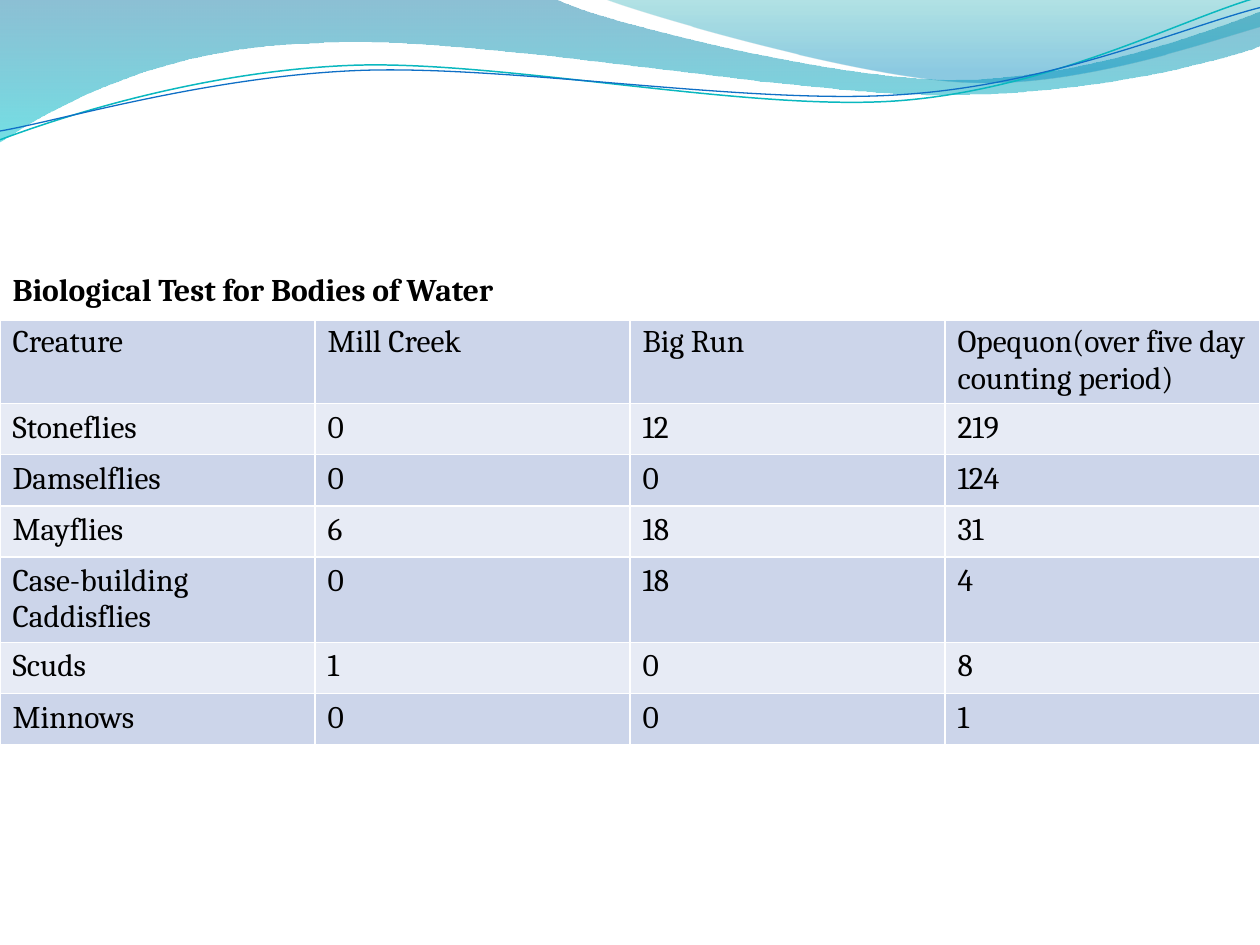
from dataclasses import dataclass
from math import cos, radians, sin

from lxml.etree import SubElement
from pptx import Presentation
from pptx.dml.color import RGBColor as RGB
from pptx.oxml.ns import qn
from pptx.util import Inches, Pt


@dataclass(frozen=True)
class Theme:
    font: str = "Cambria"
    size: int = 18
    text: str = "000000"
    white: str = "FFFFFF"
    band_dark: str = "CCD5EA"
    band_light: str = "E7EBF5"
    teal_line: str = "0AB8BF"
    blue_line: str = "0F6FC6"
    left_wave: tuple = ((0, "0074A1", 45), (100, "00C6CF", 55))
    right_wave: tuple = ((0, "00A1A9", 30), (80, "008BBF", 45))


THEME = Theme()
CURVE_ROTATION = 357.3

LEFT_WAVE_BOX = (-0.01, -0.01, 10.02, 1.14)
LEFT_WAVE = [
    (0, 0), (4.4, -0.01),
    (4.76, 0.17, 6.64, 0.63, 7.58, 0.63),
    (8.53, 0.63, 9.58, 0.26, 10, 0.09),
    (10.01, 0.36),
    (9.83, 0.44, 8.7, 0.76, 7.46, 0.75),
    (6.22, 0.75, 3.82, 0.28, 2.57, 0.34),
    (1.29, 0.36, 0.46, 0.83, -0.01, 1.13),
    (0, 0),
]
RIGHT_WAVE_BOX = (4.79, -0.01, 5.21, 0.7)
RIGHT_WAVE = [
    (4.79, -0.01),
    (5.09, 0.11, 6.82, 0.62, 7.69, 0.65),
    (8.56, 0.69, 9.61, 0.32, 10, 0.21),
    (10, 0), (4.79, -0.01),
]
TEAL_CURVE_BOX = (-0.02, 0.22, 10.02, 0.71)
TEAL_CURVE = [
    (0, 1.11),
    (0.48, 0.93, 1.58, 0.57, 2.77, 0.52),
    (3.95, 0.47, 5.93, 0.89, 7.13, 0.8),
    (8.33, 0.71, 9.38, 0.15, 9.98, -0.02),
]
BLUE_CURVE_BOX = (-0.02, 0.3, 10.03, 0.58)
BLUE_CURVE = [
    (0, 1.04),
    (0.47, 0.96, 1.64, 0.61, 2.83, 0.56),
    (4.03, 0.51, 5.97, 0.84, 7.17, 0.75),
    (8.36, 0.67, 9.41, 0.21, 10, 0.06),
]

TITLE = "Biological Test for Bodies of Water"
ROWS = [
    ("Creature", "Mill Creek", "Big Run", "Opequon(over five day counting period)"),
    ("Stoneflies", "0", "12", "219"),
    ("Damselflies", "0", "0", "124"),
    ("Mayflies", "6", "18", "31"),
    ("Case-building Caddisflies", "0", "18", "4"),
    ("Scuds", "1", "0", "8"),
    ("Minnows", "0", "0", "1"),
]


def to_local(x, y, box, rotation):
    left, top, width, height = box
    dx, dy = x - left - width / 2, y - top - height / 2
    a = radians(-rotation)
    return (Inches(dx * cos(a) - dy * sin(a) + width / 2),
            Inches(dx * sin(a) + dy * cos(a) + height / 2))


def write_outline(outline, segments, box, rotation, close):
    for child in list(outline):
        outline.remove(child)
    outline.set("w", str(Inches(box[2])))
    outline.set("h", str(Inches(box[3])))
    for i, segment in enumerate(segments):
        tag = "moveTo" if i == 0 else "lnTo" if len(segment) == 2 else "cubicBezTo"
        command = SubElement(outline, qn(f"a:{tag}"))
        for x, y in zip(segment[::2], segment[1::2]):
            px, py = to_local(x, y, box, rotation)
            pt = SubElement(command, qn("a:pt"))
            pt.set("x", str(px))
            pt.set("y", str(py))
    if close:
        SubElement(outline, qn("a:close"))


def add_freeform(s, segments, box, rotation=0, close=False):
    ends = [(Inches(seg[-2]), Inches(seg[-1])) for seg in segments]
    builder = s.shapes.build_freeform(*ends[0])
    builder.add_line_segments(ends[1:], close=close)
    sp = builder.convert_to_shape()
    sp.left, sp.top, sp.width, sp.height = map(Inches, box)
    sp.rotation = rotation
    sp.shadow.inherit = False
    outline = next(sp.element.spPr.iter(qn("a:path")))
    write_outline(outline, segments, box, rotation, close)
    return sp


def add_wave(s, segments, box, stops):
    sp = add_freeform(s, segments, box, close=True)
    sp.line.fill.background()
    sp.fill.gradient()
    sp.fill.gradient_angle = 270
    for stop, (_, color, _) in zip(sp.fill.gradient_stops, stops):
        stop.color.rgb = RGB.from_string(color)
    for gs, (position, _, opacity) in zip(sp.element.spPr.iter(qn("a:gs")), stops):
        gs.set("pos", str(position * 1000))
        SubElement(gs[0], qn("a:alpha")).set("val", str(opacity * 1000))


def add_curve(s, segments, box, color, width):
    sp = add_freeform(s, segments, box, CURVE_ROTATION)
    sp.fill.background()
    sp.line.color.rgb = RGB.from_string(color)
    sp.line.width = Pt(width)


def set_borders(cell, top=1, bottom=1):
    tc_pr = cell._tc.get_or_add_tcPr()
    for side, width in (("L", 1), ("R", 1), ("T", top), ("B", bottom)):
        ln = SubElement(tc_pr, qn(f"a:ln{side}"))
        ln.set("w", str(Pt(width)))
        fill = SubElement(ln, qn("a:solidFill"))
        SubElement(fill, qn("a:srgbClr")).set("val", THEME.white)


def fill_cell(cell, text, color, bold=False):
    cell.fill.solid()
    cell.fill.fore_color.rgb = RGB.from_string(color)
    p = cell.text_frame.paragraphs[0]
    p.text = text
    for r in p.runs:
        r.font.name = THEME.font
        r.font.size = Pt(THEME.size)
        r.font.bold = bold
        r.font.color.rgb = RGB.from_string(THEME.text)


def add_count_table(s):
    col_count = len(ROWS[0])
    frame = s.shapes.add_table(len(ROWS) + 1, col_count, 0, Inches(2.12),
                               Inches(10), Inches(3.83))
    table = frame.table
    table.first_row = table.horz_banding = False
    for row in table.rows:
        row.height = Inches(3.65) // 9
    frame.height = Inches(3.83)
    for cell in table.rows[0].cells:
        set_borders(cell, bottom=3)
    title = table.cell(0, 0)
    title.merge(table.cell(0, col_count - 1))
    fill_cell(title, TITLE, THEME.white, bold=True)
    for i, values in enumerate(ROWS, 1):
        color = THEME.band_dark if i % 2 else THEME.band_light
        for j, value in enumerate(values):
            cell = table.cell(i, j)
            set_borders(cell, top=3 if i == 1 else 1)
            fill_cell(cell, value, color)


def main():
    prs = Presentation()
    prs.slide_width, prs.slide_height = Inches(10), Inches(7.5)
    s = prs.slides.add_slide(prs.slide_layouts[6])
    add_wave(s, LEFT_WAVE, LEFT_WAVE_BOX, THEME.left_wave)
    add_wave(s, RIGHT_WAVE, RIGHT_WAVE_BOX, THEME.right_wave)
    add_curve(s, TEAL_CURVE, TEAL_CURVE_BOX, THEME.teal_line, 0.85)
    add_curve(s, BLUE_CURVE, BLUE_CURVE_BOX, THEME.blue_line, 0.75)
    add_count_table(s)
    prs.save("out.pptx")


if __name__ == "__main__":
    main()
